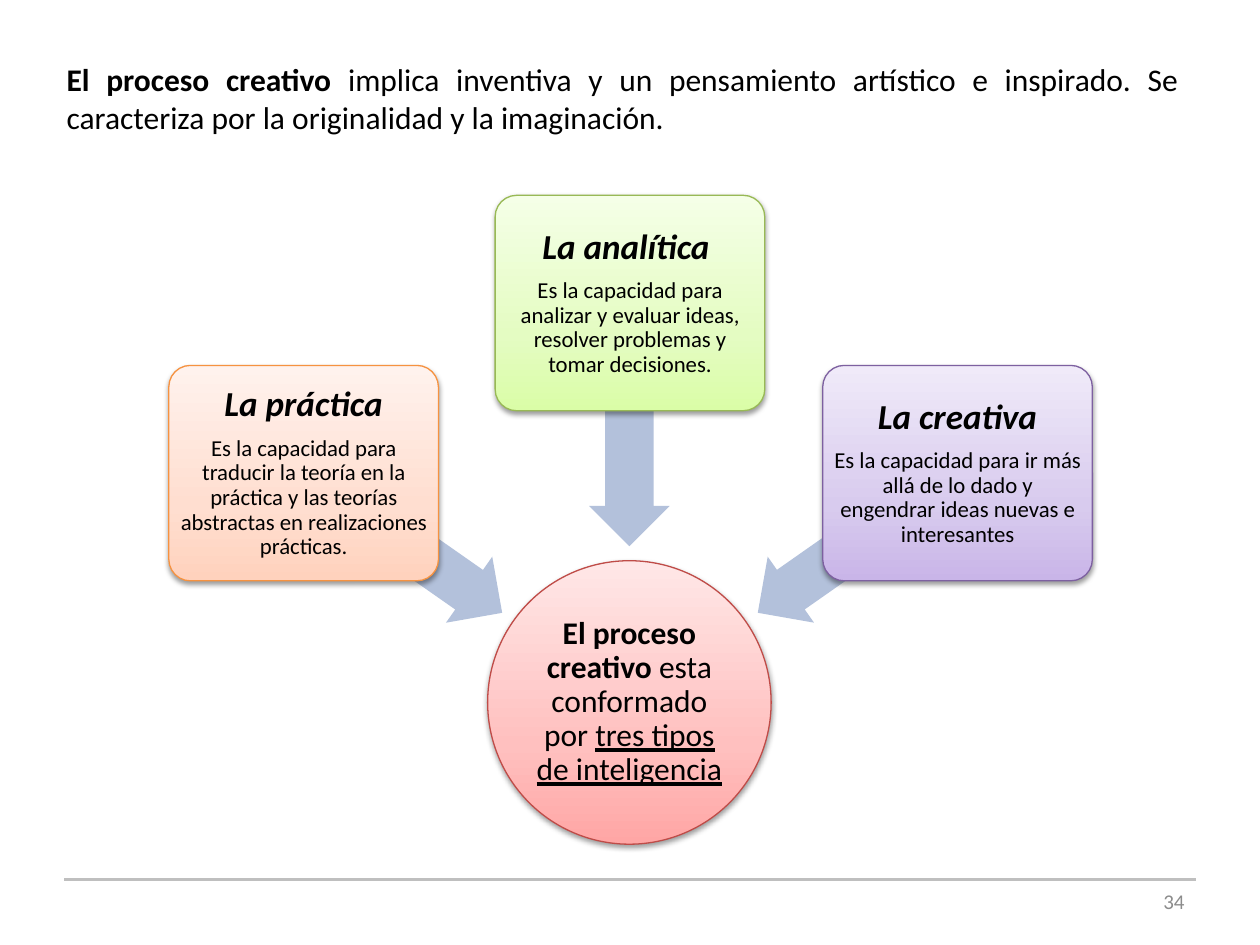
from lxml.etree import SubElement
from pptx import Presentation
from pptx.dml.color import RGBColor
from pptx.enum.shapes import MSO_CONNECTOR, MSO_SHAPE as SHAPE
from pptx.enum.text import MSO_ANCHOR as ANCHOR, MSO_AUTO_SIZE as AUTO_SIZE, PP_ALIGN as ALIGN
from pptx.oxml.ns import qn
from pptx.util import Inches, Pt

BLACK = RGBColor(0x00, 0x00, 0x00)
GRAY = RGBColor(0x8C, 0x8C, 0x8C)
RULE = RGBColor(0xBF, 0xBF, 0xBF)
ARROW = RGBColor(0xB3, 0xC1, 0xDB)
RED_LINE = RGBColor(0xBF, 0x4C, 0x48)
ORANGE_LINE = RGBColor(0xF6, 0x92, 0x40)
GREEN_LINE = RGBColor(0x98, 0xB9, 0x55)
PURPLE_LINE = RGBColor(0x7D, 0x60, 0xA0)
RED = RGBColor(0xFF, 0xA6, 0xA5), RGBColor(0xFF, 0xC0, 0xBF), RGBColor(0xFF, 0xE7, 0xE7)
ORANGE = RGBColor(0xFF, 0xD2, 0xBD), RGBColor(0xFF, 0xDE, 0xD0), RGBColor(0xFF, 0xF2, 0xED)
GREEN = RGBColor(0xDA, 0xFD, 0xA7), RGBColor(0xE4, 0xFC, 0xC2), RGBColor(0xF5, 0xFF, 0xE7)
PURPLE = RGBColor(0xC9, 0xB5, 0xE8), RGBColor(0xD8, 0xCB, 0xEE), RGBColor(0xF0, 0xEA, 0xF9)

INTELLIGENCES = [
    ("La práctica", "Es la capacidad para traducir la teoría en la práctica y las teorías "
     "abstractas en realizaciones prácticas.", 1.34, 2.9, ORANGE, ORANGE_LINE, 2.23, 3.99, 215),
    ("La analítica ", "Es la capacidad para analizar y evaluar ideas, resolver problemas y "
     "tomar decisiones.", 3.93, 1.55, GREEN, GREEN_LINE, 4.03, 3.05, 270),
    ("La creativa", "Es la capacidad para ir más allá de lo dado y engendrar ideas nuevas e "
     "interesantes", 6.53, 2.9, PURPLE, PURPLE_LINE, 5.84, 3.99, 325),
]


class Painter:
    """Draws styled elements on the current slide."""

    font = "Calibri"

    def __init__(self, page):
        self.page = page

    def fill_paragraph(self, para, spans, size, align, color=BLACK):
        para.alignment = align
        para.font.name = self.font
        para.font.size = Pt(size)
        para.font.color.rgb = color
        for text, *styles in spans:
            span = para.add_run()
            span.text = text
            span.font.bold = "bold" in styles or None
            span.font.italic = "italic" in styles or None
            span.font.underline = "underline" in styles or None

    def text(self, left, top, width, height, spans, size, align, color=BLACK, anchor=ANCHOR.TOP):
        box = self.page.shapes.add_textbox(Inches(left), Inches(top), Inches(width), Inches(height))
        box.text_frame.word_wrap = True
        box.text_frame.vertical_anchor = anchor
        self.fill_paragraph(box.text_frame.paragraphs[0], spans, size, align, color)
        return box

    def node(self, kind, left, top, width, height, colors, outline, inset, paragraphs):
        shape = self.page.shapes.add_shape(
            kind, Inches(left), Inches(top), Inches(width), Inches(height))
        if kind == SHAPE.ROUNDED_RECTANGLE:
            shape.adjustments[0] = 0.1
        self.shade(shape, colors)
        shape.line.color.rgb = outline
        shape.line.width = Pt(0.75)
        self.cast_shadow(shape)
        frame = shape.text_frame
        frame.word_wrap = True
        frame.vertical_anchor = ANCHOR.MIDDLE
        frame.margin_left = frame.margin_right = Inches(inset)
        frame.margin_top = frame.margin_bottom = Inches(inset)
        for index, (spans, size) in enumerate(paragraphs):
            para = frame.add_paragraph() if index else frame.paragraphs[0]
            para.line_spacing = 0.9
            para.space_after = Pt(round(size * 0.35, 1))
            self.fill_paragraph(para, spans, size, ALIGN.CENTER)

    def shade(self, shape, colors):
        shape.fill.gradient()
        shape.fill.gradient_angle = 90
        stops = shape._element.spPr.find(qn("a:gradFill")).find(qn("a:gsLst"))
        for stop in list(stops):
            stops.remove(stop)
        for position, color in zip((0, 35, 100), colors):
            stop = SubElement(stops, qn("a:gs"), pos=str(position * 1000))
            SubElement(stop, qn("a:srgbClr"), val=str(color))

    def cast_shadow(self, shape):
        shape.shadow.inherit = False
        effects = shape._element.spPr.find(qn("a:effectLst"))
        shadow = SubElement(effects, qn("a:outerShdw"), blurRad=str(Pt(3.1)), dist=str(Pt(1.6)),
                            dir="5400000", rotWithShape="0")
        color = SubElement(shadow, qn("a:srgbClr"), val=str(BLACK))
        SubElement(color, qn("a:alpha"), val="38000")

    def arrow(self, left, top, rotation):
        arrow = self.page.shapes.add_shape(
            SHAPE.LEFT_ARROW, Inches(left), Inches(top), Inches(1.93), Inches(0.64))
        arrow.adjustments[0] = 0.6
        arrow.adjustments[1] = 0.5
        arrow.rotation = rotation
        arrow.fill.solid()
        arrow.fill.fore_color.rgb = ARROW
        arrow.line.fill.background()
        arrow.shadow.inherit = False

    def rule(self, left, right, y):
        line = self.page.shapes.add_connector(
            MSO_CONNECTOR.STRAIGHT, Inches(left), Inches(y), Inches(right), Inches(y))
        line.line.color.rgb = RULE
        line.line.width = Pt(2)
        SubElement(line._element.spPr, qn("a:effectLst"))


def main():
    deck = Presentation()
    deck.slide_width, deck.slide_height = Inches(10), Inches(7.5)
    painter = Painter(deck.slides.add_slide(deck.slide_layouts[6]))

    painter.rule(0.51, 9.49, 6.98)
    intro = painter.text(0.43, 0.43, 9.02, 0.71, [
        ("El proceso creativo ", "bold"),
        ("implica inventiva y un pensamiento artístico e inspirado. "
         "Se caracteriza por la originalidad y la imaginación.",),
    ], 18, ALIGN.JUSTIFY)
    intro.text_frame.auto_size = AUTO_SIZE.SHAPE_TO_FIT_TEXT

    painter.node(SHAPE.OVAL, 3.87, 4.45, 2.25, 2.25, RED, RED_LINE, 0.01, [
        ([("El proceso creativo ", "bold"), ("esta conformado por ",),
          ("tres tipos de inteligencia", "underline")], 18)])
    for name, meaning, left, top, colors, outline, arrow_left, arrow_top, turn in INTELLIGENCES:
        painter.arrow(arrow_left, arrow_top, turn)
        painter.node(SHAPE.ROUNDED_RECTANGLE, left, top, 2.14, 1.71, colors, outline, 0.04, [
            ([(name, "bold", "italic")], 20), ([(meaning,)], 13)])
    painter.text(7.17, 6.95, 2.33, 0.4, [("34",)], 12, ALIGN.RIGHT, GRAY, ANCHOR.MIDDLE)

    deck.save("out.pptx")


if __name__ == "__main__":
    main()
